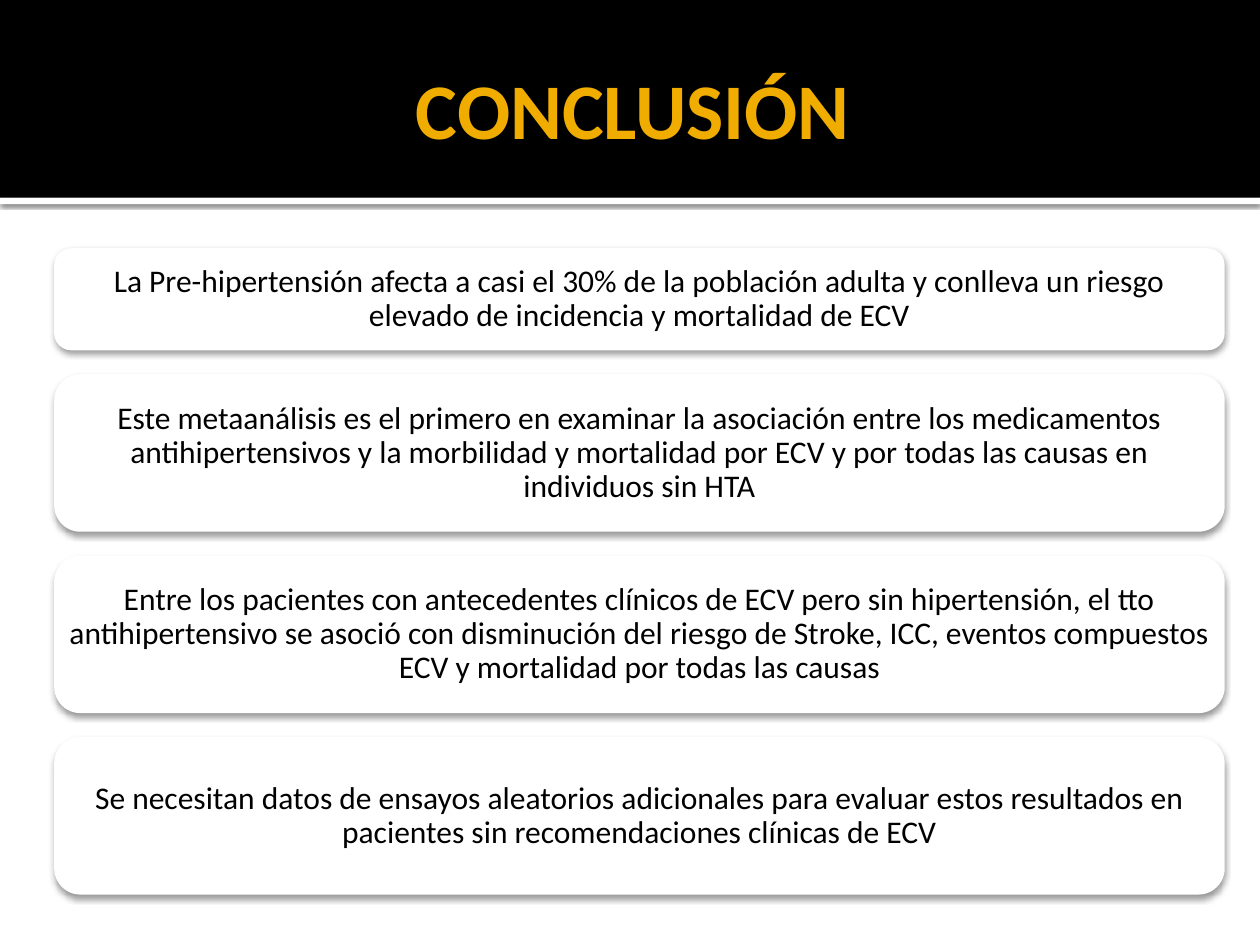
from lxml import etree
from pptx import Presentation
from pptx.dml.color import RGBColor
from pptx.enum.shapes import MSO_SHAPE
from pptx.enum.text import MSO_ANCHOR, PP_ALIGN
from pptx.oxml.ns import qn
from pptx.util import Inches, Pt

RECT, ROUNDED = MSO_SHAPE.RECTANGLE, MSO_SHAPE.ROUNDED_RECTANGLE
MIDDLE, CENTER = MSO_ANCHOR.MIDDLE, PP_ALIGN.CENTER
FONT = "Calibri"
COLORS = {"black": "000000", "white": "FFFFFF", "gold": "F0AD00"}

# Content: heading, then each conclusion with its card height in inches
TITLE = "CONCLUSIÓN"
CONCLUSIONS = [
    ("La Pre-hipertensión afecta a casi el 30% de la población adulta y conlleva "
     "un riesgo elevado de incidencia y mortalidad de ECV", 0.81),
    ("Este metaanálisis es el primero en examinar la asociación entre los "
     "medicamentos antihipertensivos y la morbilidad y mortalidad por ECV y por "
     "todas las causas en individuos sin HTA", 1.25),
    ("Entre los pacientes con antecedentes clínicos de ECV pero sin hipertensión, "
     "el tto antihipertensivo se asoció con disminución del riesgo de Stroke, ICC, "
     "eventos compuestos ECV y mortalidad por todas las causas", 1.25),
    ("Se necesitan datos de ensayos aleatorios adicionales para evaluar estos "
     "resultados en pacientes sin recomendaciones clínicas de ECV", 1.25),
]

# Layout in inches
SLIDE_W, SLIDE_H = 10, 7.5
BANNER_H, RULE_H = 1.57, 0.05
CARD_LEFT, CARD_TOP, CARD_W, CARD_GAP = 0.43, 1.97, 9.29, 0.19
CARD_INSET = 0.01  # the rounded corners add the rest of the margin


def rgb(name):
    return RGBColor.from_string(COLORS[name])


def add_panel(slide, preset, box, color):
    panel = slide.shapes.add_shape(preset, *map(Inches, box))
    panel.shadow.inherit = False
    panel.fill.solid()
    panel.fill.fore_color.rgb = rgb(color)
    panel.line.fill.background()
    return panel


def add_shadow(panel, opacity, blur, distance):
    """Cast a black shadow straight down; opacity in percent, lengths in points."""
    effects = panel.element.spPr.find(qn("a:effectLst"))
    shadow = etree.SubElement(effects, qn("a:outerShdw"), blurRad=str(Pt(blur)),
                              dist=str(Pt(distance)), dir="5400000", rotWithShape="0")
    color = etree.SubElement(shadow, qn("a:srgbClr"), val=COLORS["black"])
    etree.SubElement(color, qn("a:alpha"), val=str(opacity * 1000))


def write(shape, text, size, color, insets, bold=False):
    frame = shape.text_frame
    frame.word_wrap = True
    frame.vertical_anchor = MIDDLE
    (frame.margin_left, frame.margin_top,
     frame.margin_right, frame.margin_bottom) = map(Inches, insets)
    paragraph = frame.paragraphs[0]
    paragraph.text = text
    paragraph.alignment = CENTER
    font = paragraph.font
    font.name, font.size, font.bold = FONT, Pt(size), bold
    font.color.rgb = rgb(color)
    return paragraph


def main():
    deck = Presentation()
    deck.slide_width, deck.slide_height = Inches(SLIDE_W), Inches(SLIDE_H)
    slide = deck.slides.add_slide(deck.slide_layouts[6])

    # Banner with a shadowed white rule beneath
    rule = add_panel(slide, RECT, (0, BANNER_H, SLIDE_W, RULE_H), "white")
    add_shadow(rule, 60, 2.5, 0.8)
    add_panel(slide, RECT, (0, 0, SLIDE_W, BANNER_H), "black")

    # Title
    title = slide.shapes.add_textbox(*map(Inches, (0.5, 0.17, 9, 1.37)))
    write(title, TITLE, 45, "gold", (0.1, 0.05, 0.05, 0.05), bold=True)

    # Stacked conclusion cards
    top = CARD_TOP
    for conclusion, height in CONCLUSIONS:
        card = add_panel(slide, ROUNDED, (CARD_LEFT, top, CARD_W, height), "white")
        add_shadow(card, 38, 3.5, 2)
        paragraph = write(card, conclusion, 18, "black", (CARD_INSET,) * 4)
        paragraph.line_spacing = 0.9
        top += height + CARD_GAP

    deck.save("out.pptx")


if __name__ == "__main__":
    main()
